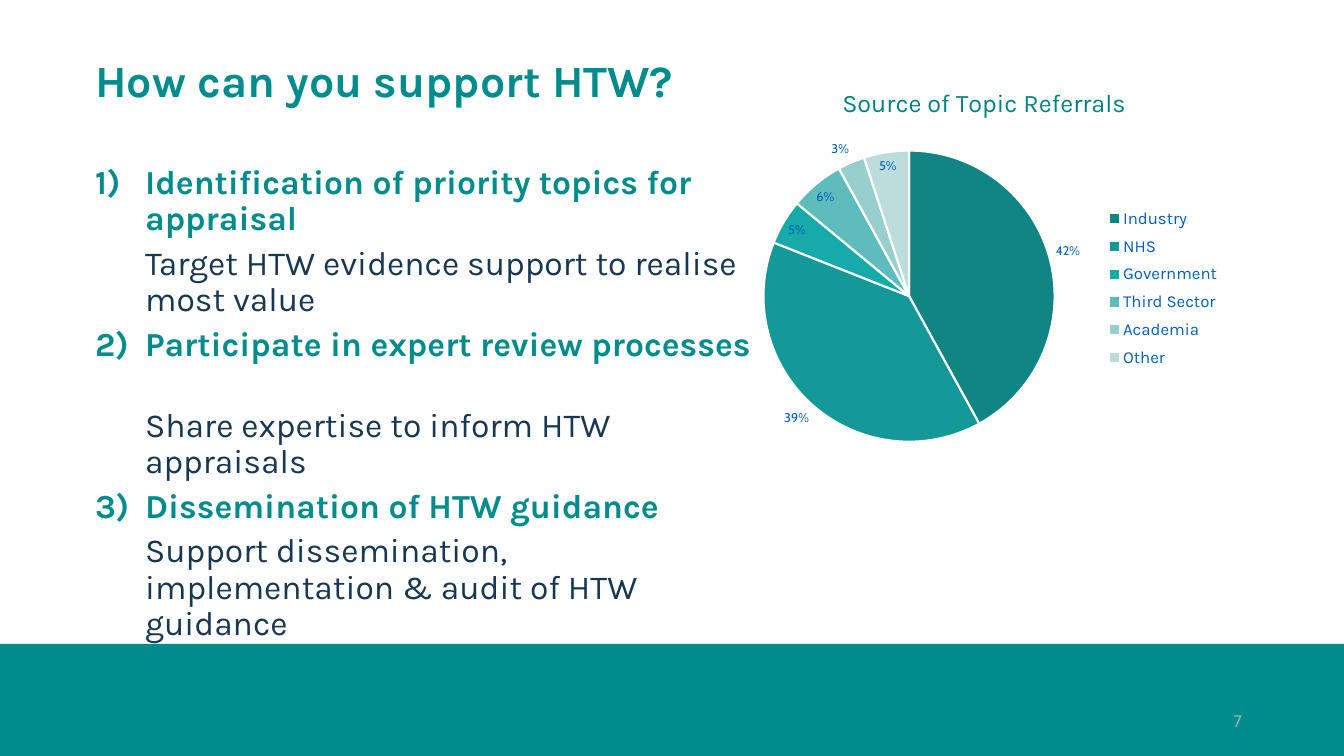
from lxml.etree import SubElement
from pptx import Presentation
from pptx.chart.data import CategoryChartData
from pptx.dml.color import RGBColor
from pptx.enum.chart import XL_CHART_TYPE, XL_LABEL_POSITION, XL_LEGEND_POSITION
from pptx.enum.shapes import MSO_SHAPE
from pptx.enum.text import MSO_ANCHOR, MSO_AUTO_SIZE, PP_ALIGN
from pptx.oxml import parse_xml
from pptx.oxml.ns import nsdecls, qn
from pptx.util import Emu, Pt

PX = 914400 / 100.8
TEAL, NAVY, BLUE = "008C8D", "183753", "005EB8"
ACTIONS = [
    ("Identification of priority topics for appraisal",
     "Target HTW evidence support to realise most value", 6),
    ("Participate in expert review processes",
     "Share expertise to inform HTW appraisals", 32),
    ("Dissemination of HTW guidance",
     "Support dissemination, implementation & audit of HTW guidance", 6),
]
REFERRALS = [
    ("Industry", 0.42, "118484"),
    ("NHS", 0.39, "149998"),
    ("Government", 0.05, "16ABAA"),
    ("Third Sector", 0.06, "5FBCBC"),
    ("Academia", 0.03, "98CECD"),
    ("Other", 0.05, "BDDDDD"),
]
OUTSIDE_LABELS = {"Industry", "NHS", "Academia"}


def px(length):
    """Turn a length in px into EMU."""
    return Emu(round(length * PX))


def color(value):
    """Turn a hex string into a colour."""
    return RGBColor.from_string(value)


def style(font, size, value, name="Karla", bold=False):
    """Set the size, colour, face and weight of a font."""
    font.size, font.name, font.bold = Pt(size), name, bold
    font.color.rgb = color(value)


def place(shape, left, top, width, height):
    """Move and size a shape in px."""
    shape.left, shape.top = px(left), px(top)
    shape.width, shape.height = px(width), px(height)


def add_span(para, text, size, value, name="Karla", bold=False):
    """Add one formatted run to a paragraph."""
    span = para.add_run()
    span.text = text
    style(span.font, size, value, name, bold)


def add_band(slide):
    """Draw the teal band behind everything else."""
    band = slide.shapes.add_shape(
        MSO_SHAPE.RECTANGLE, px(0), px(644), px(1344), px(112))
    band.shadow.inherit = False
    band.fill.solid()
    band.fill.fore_color.rgb = color(TEAL)
    band.line.fill.background()
    slide.shapes._spTree.insert(2, band._element)


def fill_title(title):
    """Write the slide title."""
    place(title, 85, 42, 1159, 82)
    frame = title.text_frame
    frame.vertical_anchor = MSO_ANCHOR.MIDDLE
    frame.auto_size = MSO_AUTO_SIZE.NONE
    para = frame.paragraphs[0]
    para.alignment, para.line_spacing = PP_ALIGN.LEFT, 0.9
    add_span(para, "How can you support HTW?", 32, TEAL, bold=True)


def add_item(para, text, numbered, after):
    """Write a numbered heading or the plain line below it."""
    properties = para._p.get_or_add_pPr()
    properties.set("marL", str(px(50)))
    properties.set("indent", str(px(-50 if numbered else 0)))
    if numbered:
        SubElement(properties, qn("a:buFont"), typeface="+mj-lt")
        SubElement(properties, qn("a:buAutoNum"), type="arabicParenR")
    else:
        SubElement(properties, qn("a:buNone"))
    para.level = 0 if numbered else 1
    para.alignment, para.line_spacing = PP_ALIGN.LEFT, 0.9
    para.space_before, para.space_after = Pt(0), Pt(after)
    add_span(para, text, 24, TEAL if numbered else NAVY, bold=numbered)


def fill_body(body):
    """Write the list of actions."""
    place(body, 85, 160, 680, 454)
    frame = body.text_frame
    frame.auto_size = MSO_AUTO_SIZE.NONE
    frame.vertical_anchor = MSO_ANCHOR.TOP
    para = frame.paragraphs[0]
    for index, (heading, detail, after) in enumerate(ACTIONS):
        if index:
            para = frame.add_paragraph()
        add_item(para, heading, True, after)
        add_item(frame.add_paragraph(), detail, False, 6)


def add_page_number(slide):
    """Write the page number on the band."""
    box = slide.shapes.add_textbox(px(950), px(701), px(302), px(40))
    frame = box.text_frame
    frame.word_wrap = True
    frame.vertical_anchor = MSO_ANCHOR.MIDDLE
    para = frame.paragraphs[0]
    para.alignment = PP_ALIGN.RIGHT
    add_span(para, "7", 12, "8CB2B3", "Cabin")


def set_layout(element, before, **shares):
    """Fix the place of a chart part as shares of the chart."""
    for old in element.findall(qn("c:layout")):
        element.remove(old)
    modes = "".join(f'<c:{axis}Mode val="edge"/>' for axis in "xy")
    if element.tag == qn("c:plotArea"):
        modes = '<c:layoutTarget val="inner"/>' + modes
    sizes = "".join(f'<c:{key} val="{share}"/>' for key, share in shares.items())
    layout = parse_xml(f'<c:layout {nsdecls("c")}><c:manualLayout>'
                       f'{modes}{sizes}</c:manualLayout></c:layout>')
    if before is None:
        element.insert(0, layout)
    else:
        element.find(qn(before)).addprevious(layout)


def format_slices(plot):
    """Colour the slices and set their labels."""
    labels = plot.series[0].data_labels
    labels.show_value, labels.show_percentage = True, False
    labels.number_format, labels.number_format_is_linked = "0%", False
    labels.position = XL_LABEL_POSITION.BEST_FIT
    style(labels.font, 9, BLUE, "Cabin")
    for index, (name, _, value) in enumerate(REFERRALS):
        point = plot.series[0].points[index]
        point.format.fill.solid()
        point.format.fill.fore_color.rgb = color(value)
        point.format.line.color.rgb = color("FFFFFF")
        point.format.line.width = Pt(1.5)
        if name in OUTSIDE_LABELS:
            style(point.data_label.font, 9, BLUE, "Cabin")
            point.data_label.position = XL_LABEL_POSITION.OUTSIDE_END


def add_referral_chart(slide):
    """Draw the pie of topic referrals."""
    data = CategoryChartData(number_format="0%")
    data.categories = [name for name, _, _ in REFERRALS]
    data.add_series("Series 1", [share for _, share, _ in REFERRALS])
    chart = slide.shapes.add_chart(
        XL_CHART_TYPE.PIE, px(695), px(62), px(571), px(397), data).chart
    style(chart.font, 10, TEAL, "Cabin")
    chart.has_title = True
    add_span(chart.chart_title.text_frame.paragraphs[0],
             "Source of Topic Referrals", 18, "008080")
    chart.has_legend = True
    chart.legend.position = XL_LEGEND_POSITION.RIGHT
    chart.legend.include_in_layout = False
    style(chart.legend.font, 12, BLUE)
    plot = chart.plots[0]
    plot.vary_by_categories = True
    format_slices(plot)
    set_layout(chart.chart_title._element, "c:overlay", x=0.25, y=0.05)
    set_layout(chart.legend._element, "c:overlay", x=0.71, y=0.35, w=0.22, h=0.44)
    set_layout(plot._element.getparent(), None, x=0.12, y=0.22, w=0.51, h=0.74)


def main():
    """Build the slide and save it."""
    deck = Presentation()
    deck.slide_width, deck.slide_height = px(1344), px(756)
    page = deck.slides.add_slide(deck.slide_layouts[1])
    add_band(page)
    fill_title(page.shapes.title)
    add_page_number(page)
    fill_body(page.placeholders[1])
    add_referral_chart(page)
    deck.save("out.pptx")


if __name__ == "__main__":
    main()
